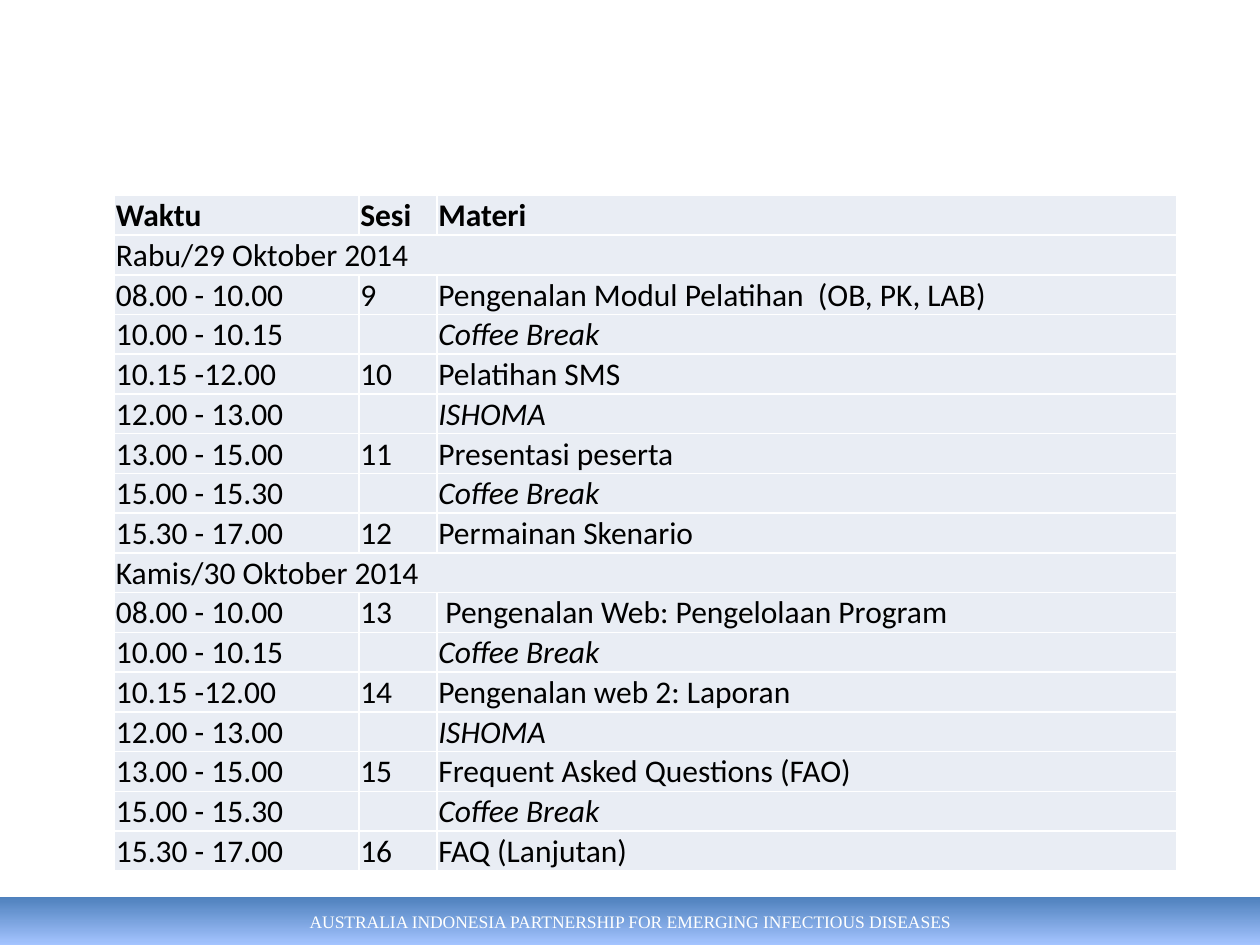
from lxml.etree import SubElement as Sub
from pptx import Presentation
from pptx.dml.color import RGBColor as RGB
from pptx.enum.shapes import MSO_SHAPE as Shape
from pptx.enum.text import MSO_ANCHOR as Anchor, PP_ALIGN as Align
from pptx.oxml.ns import qn
from pptx.util import Inches, Pt

HEAD = ("Waktu", "Sesi", "Materi")
TIMES = ("08.00 - 10.00", "10.00 - 10.15", "10.15 -12.00", "12.00 - 13.00",
         "13.00 - 15.00", "15.00 - 15.30", "15.30 - 17.00")
BREAKS = {1: "Coffee Break", 3: "ISHOMA", 5: "Coffee Break"}
DAYS = [
    ("Rabu/29 Oktober 2014",
     ("Pengenalan Modul Pelatihan  (OB, PK, LAB)", "Pelatihan SMS",
      "Presentasi peserta", "Permainan Skenario")),
    ("Kamis/30 Oktober 2014",
     (" Pengenalan Web: Pengelolaan Program", "Pengenalan web 2: Laporan",
      "Frequent Asked Questions (FAO)", "FAQ (Lanjutan)")),
]
FIRST = 9
FOOTER = "AUSTRALIA INDONESIA PARTNERSHIP FOR EMERGING INFECTIOUS DISEASES"

THEME = {
    "body": "Calibri", "foot": "Times New Roman",
    "size": Pt(18), "small": Pt(10),
    "ink": RGB.from_string("000000"), "white": RGB.from_string("FFFFFF"),
    "cell": RGB.from_string("E9EDF4"),
    "fade": (RGB.from_string("4F81BD"), RGB.from_string("A4C4FF")),
}
WIDTHS = (1.94, 0.62, 5.87)
LEFT, TOP, ROW = 0.91, 1.55, 0.31


def plan():
    """List the rows as (texts, style); a day row has one text."""
    rows, sesi = [(HEAD, "bold")], FIRST
    for day, topics in DAYS:
        rows.append(((day,), "day"))
        left = iter(topics)
        for i, time in enumerate(TIMES):
            if i in BREAKS:
                rows.append(((time, "", BREAKS[i]), "break"))
            else:
                rows.append(((time, str(sesi), next(left)), "topic"))
                sesi += 1
    return rows


def write(para, text, font, size, color):
    run = para.add_run()
    run.text = text
    run.font.name, run.font.size = font, size
    run.font.color.rgb = color
    return run


def dress(cell):
    """Set margins, white borders and fill."""
    cell.margin_left = cell.margin_right = cell.margin_top = Inches(0.01)
    cell.margin_bottom = 0
    cell.vertical_anchor = Anchor.BOTTOM
    props = cell._tc.get_or_add_tcPr()
    for side in ("a:lnL", "a:lnR", "a:lnT", "a:lnB"):
        line = Sub(props, qn(side), w=str(Pt(1)))
        Sub(Sub(line, qn("a:solidFill")), qn("a:srgbClr"), val=str(THEME["white"]))
    cell.fill.solid()
    cell.fill.fore_color.rgb = THEME["cell"]


def add_plan(slide):
    rows = plan()
    table = slide.shapes.add_table(
        len(rows), len(WIDTHS), Inches(LEFT), Inches(TOP),
        Inches(sum(WIDTHS)), Inches(ROW * len(rows))).table
    table.first_row = table.horz_banding = False
    for col, width in zip(table.columns, WIDTHS):
        col.width = Inches(width)
    for r, (texts, style) in enumerate(rows):
        table.rows[r].height = Inches(ROW)
        for c in range(len(WIDTHS)):
            dress(table.cell(r, c))
        if style == "day":
            table.cell(r, 0).merge(table.cell(r, len(WIDTHS) - 1))
        for c, text in enumerate(texts):
            para = table.cell(r, c).text_frame.paragraphs[0]
            if not text:
                para.font.size = THEME["size"]
                continue
            run = write(para, text, THEME["body"], THEME["size"], THEME["ink"])
            run.font.bold = style == "bold"
            run.font.italic = style == "break" and c == 2


def add_footer(slide):
    bar = slide.shapes.add_shape(
        Shape.RECTANGLE, 0, Inches(7.12), Inches(10), Inches(0.38))
    bar.shadow.inherit = False
    bar.line.fill.background()
    bar.fill.gradient()
    bar.fill.gradient_angle = 270
    for stop, color in zip(bar.fill.gradient_stops, THEME["fade"]):
        stop.color.rgb = color
    bar.text_frame.vertical_anchor = Anchor.MIDDLE
    para = bar.text_frame.paragraphs[0]
    para.alignment = Align.CENTER
    write(para, FOOTER, THEME["foot"], THEME["small"], THEME["white"])


def main():
    deck = Presentation()
    deck.slide_width, deck.slide_height = Inches(10), Inches(7.5)
    slide = deck.slides.add_slide(deck.slide_layouts[6])
    add_footer(slide)
    add_plan(slide)
    deck.save("out.pptx")


if __name__ == "__main__":
    main()
